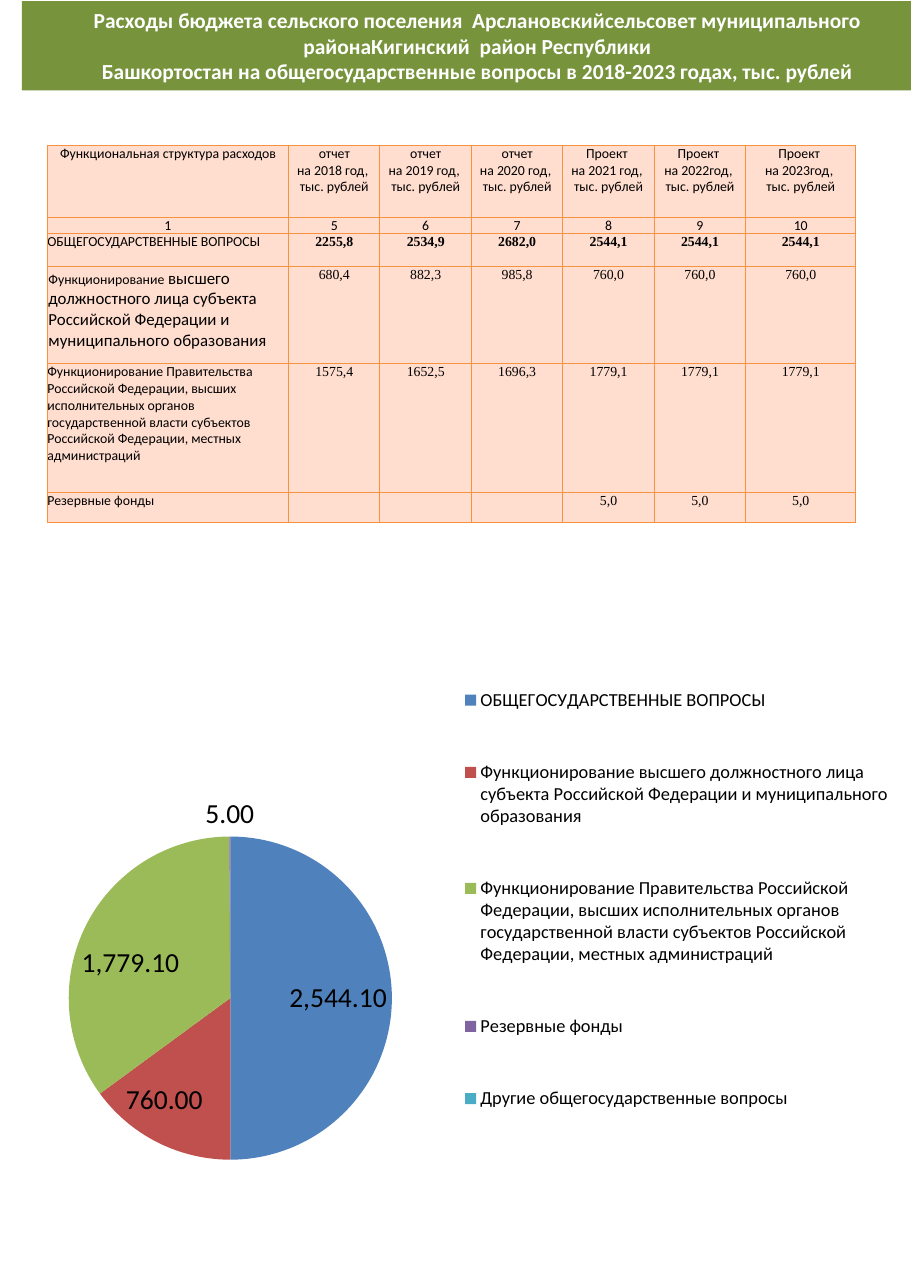
import copy
import pptx
import pptx.util
import pptx.dml.color
import pptx.chart.data
import pptx.enum.chart
import pptx.enum.shapes
import pptx.enum.text
import pptx.oxml
import pptx.oxml.ns
from lxml import etree

Inches, Pt = pptx.util.Inches, pptx.util.Pt
qn = pptx.oxml.ns.qn
ALIGN = pptx.enum.text.PP_ALIGN
MIDDLE = pptx.enum.text.MSO_ANCHOR.MIDDLE

# Content
SANS, SERIF = "Calibri", "Times New Roman"
TITLE = [
    "Расходы бюджета сельского поселения  Арслановскийсельсовет муниципального районаКигинский  район Республики",
    "Башкортостан на общегосударственные вопросы в 2018-2023 годах, тыс. рублей",
]
YEARS = [
    ("отчет", "2018 год"), ("отчет", "2019 год"), ("отчет", "2020 год"),
    ("Проект ", "2021 год"), ("Проект ", "2022год"), ("Проект ", "2023год"),
]
TOTAL = "ОБЩЕГОСУДАРСТВЕННЫЕ ВОПРОСЫ"
HEAD = "Функционирование"
HEAD_END = " высшего должностного лица субъекта Российской Федерации и муниципального образования"
GOV = ("Функционирование Правительства Российской Федерации, высших исполнительных органов "
       "государственной власти субъектов Российской Федерации, местных администраций")
FUND = "Резервные фонды"
ROWS = [
    ["Функциональная структура расходов"]
    + [f"{kind}\vна {year}, \vтыс. рублей" for kind, year in YEARS],
    ["1", "5", "6", "7", "8", "9", "10"],
    [TOTAL, "2255,8", "2534,9", "2682,0"] + ["2544,1"] * 3,
    [HEAD, "680,4", "882,3", "985,8"] + ["760,0"] * 3,
    [GOV, "1575,4", "1652,5", "1696,3"] + ["1779,1"] * 3,
    [FUND, "", "", ""] + ["5,0"] * 3,
]
WIDTHS = [2.19] + [0.83] * 5 + [1]
HEIGHTS = [0.65, 0.15, 0.3, 0.88, 1.17, 0.27]
SLICES = [
    (TOTAL, 2544.1, "4F81BD"),
    (HEAD + HEAD_END, 760, "C0504D"),
    (GOV, 1779.1, "9BBB59"),
    (FUND, 5, "8064A2"),
    ("Другие общегосударственные вопросы", 0, "4BACC6"),
]
PLOT = (0.02, 0.42, 0.38, 0.46)
LEGEND = (0.47, 0.14, 0.53, 0.74)


# Helpers
def paint(item, color):
    item.solid()
    item.fore_color.rgb = pptx.dml.color.RGBColor.from_string(color)


def style(font, size, color="000000", name=SANS, bold=False):
    font.size, font.name, font.bold = Pt(size), name, bold
    paint(font.fill, color)


def border(cell, color="F69240", width=0.75):
    props = cell._tc.get_or_add_tcPr()
    for spot, side in enumerate(("lnL", "lnR", "lnT", "lnB")):
        line = etree.Element(qn("a:" + side), w=str(Pt(width)))
        fill = etree.SubElement(line, qn("a:solidFill"))
        etree.SubElement(fill, qn("a:srgbClr"), val=color)
        props.insert(spot, line)


def place(item, box, inner=False):
    """Give a chart part a manual layout in fractions of the chart."""
    for old in item.findall(qn("c:layout")):
        item.remove(old)
    layout = etree.Element(qn("c:layout"))
    manual = etree.SubElement(layout, qn("c:manualLayout"))
    tags = [("layoutTarget", "inner")] if inner else []
    tags += [("xMode", "edge"), ("yMode", "edge")]
    tags += zip("xywh", box)
    for tag, val in tags:
        etree.SubElement(manual, qn("c:" + tag), val=str(val))
    item.insert(0 if inner else 1, layout)


deck = pptx.Presentation()
deck.slide_width, deck.slide_height = Inches(8.27), Inches(11.69)
slide = deck.slides.add_slide(deck.slide_layouts[6])

# Title band
band = slide.shapes.add_shape(
    pptx.enum.shapes.MSO_SHAPE.RECTANGLE,
    Inches(0.2), Inches(0.01), Inches(8.27), Inches(0.81))
band.shadow.inherit = False
paint(band.fill, "77933C")
band.line.fill.background()
band.text_frame.word_wrap = True
band.text_frame.text = "\n".join(TITLE)
for par in band.text_frame.paragraphs:
    par.alignment = ALIGN.CENTER
    style(par.runs[0].font, 14, "FFFFFF", bold=True)

# Expense table
table = slide.shapes.add_table(
    len(ROWS), len(WIDTHS), Inches(0.43), Inches(1.32),
    Inches(sum(WIDTHS)), Inches(sum(HEIGHTS))).table
for col, width in zip(table.columns, WIDTHS):
    col.width = Inches(width)
for row, height in zip(table.rows, HEIGHTS):
    row.height = Inches(height)
for r, texts in enumerate(ROWS):
    for c, text in enumerate(texts):
        cell = table.cell(r, c)
        paint(cell.fill, "FFDDCF")
        border(cell)
        cell.margin_left = cell.margin_right = 0
        cell.margin_top = cell.margin_bottom = 0
        if r == 1:
            cell.vertical_anchor = MIDDLE
        par = cell.text_frame.paragraphs[0]
        par.text = text
        par.alignment = ALIGN.CENTER if r < 2 or c else ALIGN.LEFT
        for run in par.runs:
            style(run.font, 9, name=SERIF if r > 1 and c else SANS,
                  bold=r == 2 and c > 0)
        # Line breaks and empty cells keep the small size too
        for gap in par._p.findall(qn("a:br")):
            gap.insert(0, copy.deepcopy(par.runs[0].font._element))
        if not text:
            etree.SubElement(par._p, qn("a:endParaRPr"), sz="900")

lead = table.cell(3, 0)
lead.margin_left = lead.margin_right = lead.margin_top = Inches(0.01)
tail = lead.text_frame.paragraphs[0].add_run()
tail.text = HEAD_END
style(tail.font, 11)

# Pie chart
data = pptx.chart.data.CategoryChartData(number_format="#,##0.00")
data.categories = [name for name, _, _ in SLICES]
data.add_series("Series 1", [val for _, val, _ in SLICES])
chart = slide.shapes.add_chart(
    pptx.enum.chart.XL_CHART_TYPE.PIE,
    Inches(0.47), Inches(4.9), Inches(7.72), Inches(6.4), data).chart
chart.has_title = False
style(chart.font, 18)
pie = chart.plots[0]
pie.vary_by_categories = True
for spot, (_, _, color) in enumerate(SLICES):
    paint(pie.series[0].points[spot].format.fill, color)
labels = pie.series[0].data_labels
labels.show_value = True
labels.number_format, labels.number_format_is_linked = "#,##0.00", False
labels.position = pptx.enum.chart.XL_LABEL_POSITION.BEST_FIT
style(labels.font, 18)

chart.has_legend = True
legend = chart.legend
legend.position = pptx.enum.chart.XL_LEGEND_POSITION.RIGHT
legend.include_in_layout = False
style(legend.font, 12)
place(chart._chartSpace.chart.plotArea, PLOT, inner=True)
place(legend._element, LEGEND)

deck.save("out.pptx")
